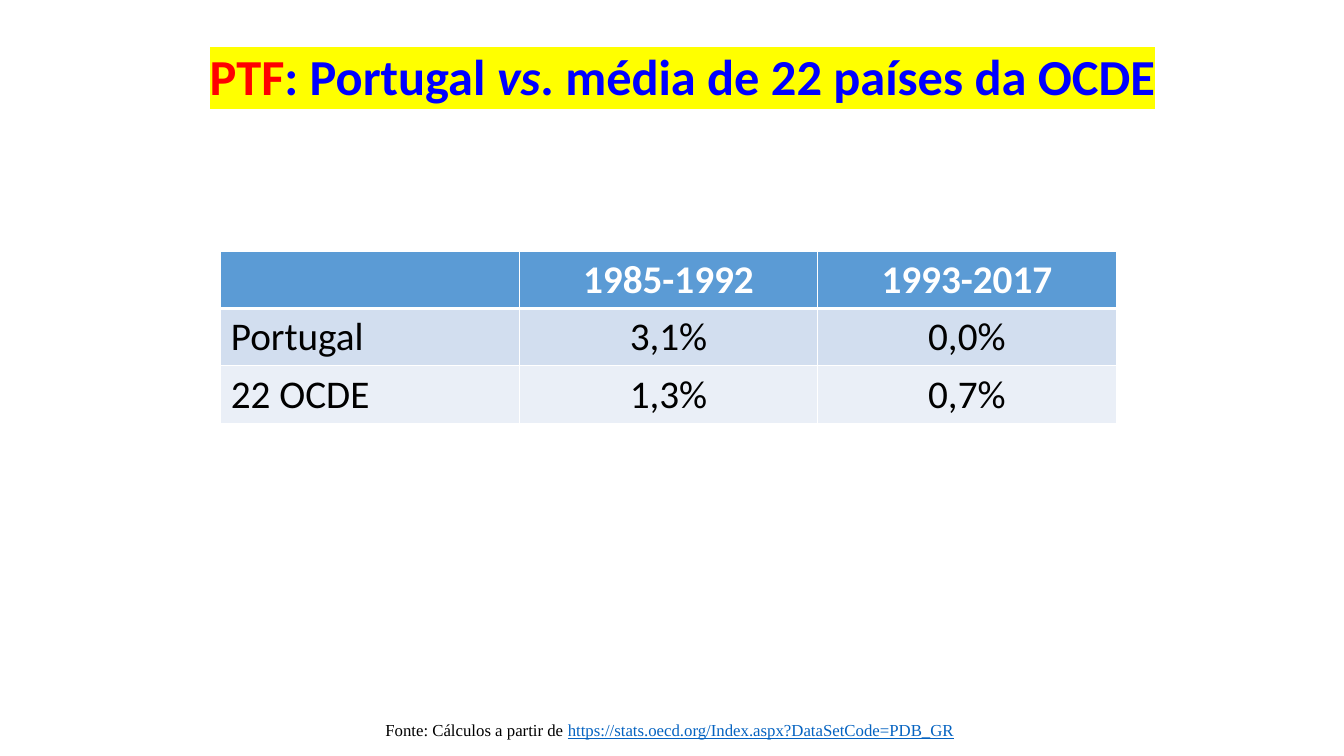
from lxml.etree import SubElement
from pptx import Presentation
from pptx.dml.color import RGBColor
from pptx.enum.text import MSO_AUTO_SIZE as AutoSize, PP_ALIGN as Align
from pptx.oxml.ns import qn
from pptx.util import Pt

PX = 9144
RED = RGBColor(0xFF, 0x00, 0x00)
BLUE = RGBColor(0x00, 0x00, 0xFF)
YELLOW = RGBColor(0xFF, 0xFF, 0x00)
BLACK = RGBColor(0x00, 0x00, 0x00)
WHITE = RGBColor(0xFF, 0xFF, 0xFF)
LINK_BLUE = RGBColor(0x05, 0x63, 0xC1)
ROW_FILLS = (RGBColor(0x5B, 0x9B, 0xD5), RGBColor(0xD2, 0xDE, 0xEF), RGBColor(0xEA, 0xEF, 0xF7))

GROWTH_ROWS = (
    ("", "1985-1992", "1993-2017"),
    ("Portugal", "3,1%", "0,0%"),
    ("22 OCDE", "1,3%", "0,7%"),
)


def place(shape, left, top, width, height):
    """Move and size a shape, in px."""
    shape.left, shape.top = left * PX, top * PX
    shape.width, shape.height = width * PX, height * PX


def style_para(para, font_name, size, bold=False, align=Align.CENTER):
    """Set the font and alignment that a whole paragraph shares."""
    para.alignment = align
    para.font.name, para.font.size, para.font.bold = font_name, Pt(size), bold


def add_span(para, text, color):
    """Append a coloured run and return it."""
    span = para.add_run()
    span.text = text
    span.font.color.rgb = color
    return span


def highlight(span, color):
    """Put a highlight behind a run."""
    mark = SubElement(span.font._element, qn("a:highlight"))
    SubElement(mark, qn("a:srgbClr"), val=str(color))


def add_title(page):
    """Fill the title placeholder with the highlighted heading."""
    title = page.shapes.title
    place(title, 183, 39, 988, 71)
    title.text_frame.auto_size = AutoSize.SHAPE_TO_FIT_TEXT
    para = title.text_frame.paragraphs[0]
    style_para(para, "Calibri", 36, bold=True)
    pieces = (("PTF", RED), (": Portugal ", BLUE), ("vs", BLUE), (". média de 22 países da OCDE", BLUE))
    for text, color in pieces:
        span = add_span(para, text, color)
        highlight(span, YELLOW)
        if text == "vs":
            span.font.italic = True


def add_source_note(page):
    """Add the centred source line at the foot of the slide."""
    box = page.shapes.add_textbox(13 * PX, 709 * PX, 1303 * PX, 30 * PX)
    box.text_frame.word_wrap = True
    box.text_frame.auto_size = AutoSize.SHAPE_TO_FIT_TEXT
    para = box.text_frame.paragraphs[0]
    style_para(para, "Times New Roman", 12)
    add_span(para, "Fonte: Cálculos a partir de ", BLACK)
    address = add_span(para, "https://stats.oecd.org/Index.aspx?DataSetCode=PDB_GR", LINK_BLUE)
    address.font.underline = True


def set_borders(cell, **widths):
    """Draw white cell borders, with widths in points by side letter."""
    properties = cell._tc.get_or_add_tcPr()
    for side, width in widths.items():
        line = SubElement(properties, qn(f"a:ln{side}"), w=str(Pt(width)))
        fill = SubElement(line, qn("a:solidFill"))
        SubElement(fill, qn("a:srgbClr"), val=str(WHITE))


def add_growth_table(page):
    """Add the table of growth rates by period."""
    frame = page.shapes.add_table(3, 3, 219 * PX, 249 * PX, 888 * PX, 171 * PX)
    for row_index, texts in enumerate(GROWTH_ROWS):
        is_header = row_index == 0
        for column_index, text in enumerate(texts):
            cell = frame.table.cell(row_index, column_index)
            set_borders(cell, L=1, R=1, T=3 if row_index == 1 else 1, B=3 if is_header else 1)
            cell.fill.solid()
            cell.fill.fore_color.rgb = ROW_FILLS[row_index]
            para = cell.text_frame.paragraphs[0]
            align = Align.CENTER if column_index else Align.LEFT
            style_para(para, "Calibri", 28, is_header, align)
            if text:
                add_span(para, text, WHITE if is_header else BLACK)


def main():
    """Build the slide and save the deck."""
    deck = Presentation()
    deck.slide_width, deck.slide_height = 1333 * PX, 750 * PX
    page = deck.slides.add_slide(deck.slide_layouts[5])
    add_title(page)
    add_source_note(page)
    add_growth_table(page)
    deck.save("out.pptx")


if __name__ == "__main__":
    main()
